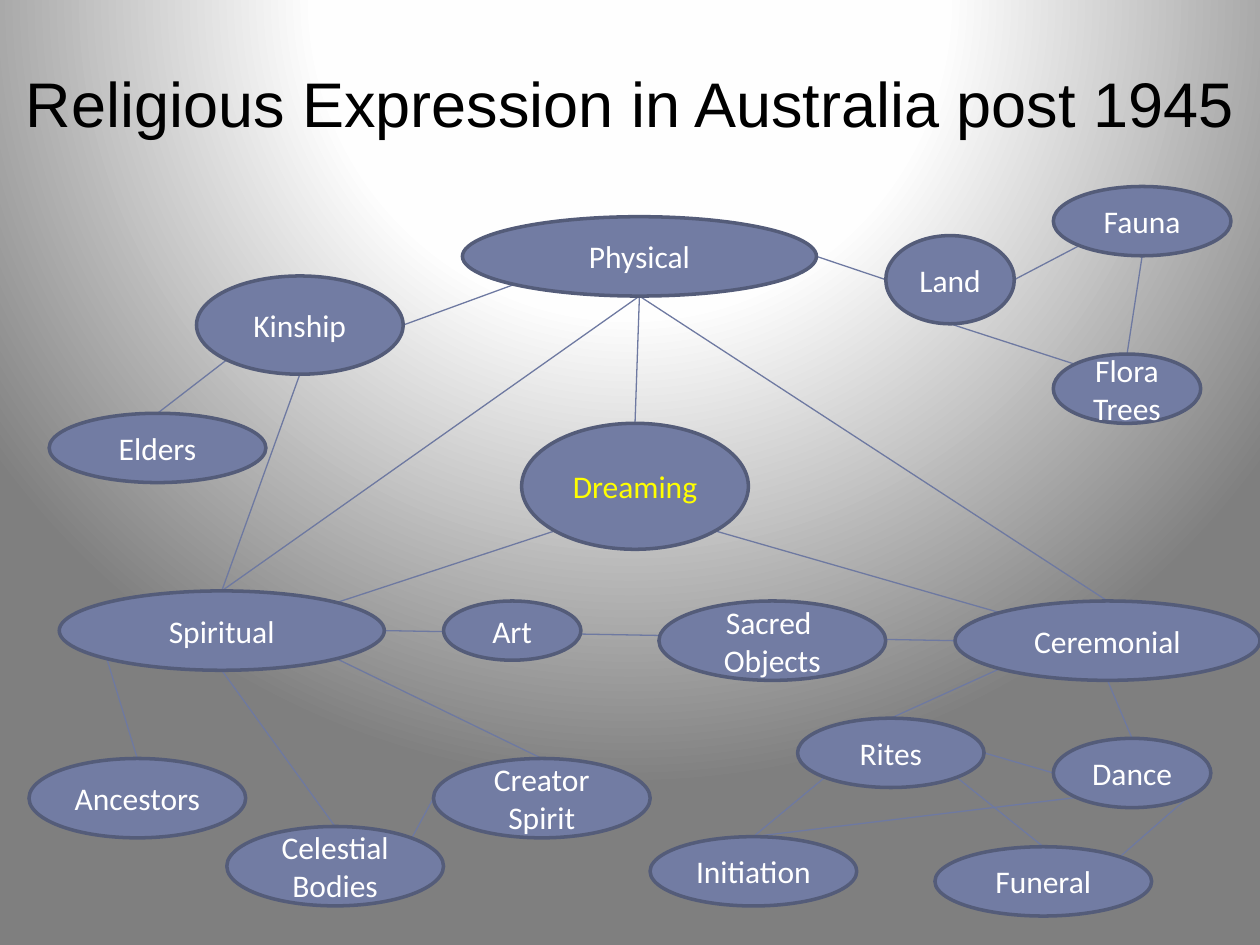
from pptx import Presentation
from pptx.dml.color import RGBColor
from pptx.enum.shapes import MSO_CONNECTOR, MSO_SHAPE
from pptx.enum.text import MSO_ANCHOR, PP_ALIGN
from pptx.oxml import parse_xml
from pptx.oxml.ns import nsdecls
from pptx.util import Inches, Pt

OVAL = MSO_SHAPE.OVAL
LINE = MSO_CONNECTOR.STRAIGHT
MIDDLE = MSO_ANCHOR.MIDDLE
CENTER = PP_ALIGN.CENTER

COLORS = {
    "fill": "727CA3", "edge": "545C79", "link": "6E79A1",
    "text": "FFFFFF", "focus": "FFFF00", "title": "000000",
}
GLOW = [(0, "FFFFFF"), (40, "FEFEFE"), (100, "7F7F7F")]

# Unit offsets from an oval's centre to its rim
DIAG = 0.707
RIM = {
    "n": (0, -1), "s": (0, 1), "w": (-1, 0), "e": (1, 0),
    "nw": (-DIAG, -DIAG), "ne": (DIAG, -DIAG),
    "sw": (-DIAG, DIAG), "se": (DIAG, DIAG),
}

# Label: left, top, width, height
NODES = {
    "Physical": (3.67, 1.72, 2.81, 0.63),
    "Spiritual": (0.47, 4.69, 2.58, 0.63),
    "Ceremonial": (7.58, 4.77, 2.42, 0.63),
    "Land": (7.03, 1.87, 1.02, 0.7),
    "Flora\nTrees": (8.36, 2.81, 1.17, 0.55),
    "Dance": (8.36, 5.86, 1.25, 0.55),
    "Ancestors": (0.23, 6.02, 1.72, 0.63),
    "Creator\nSpirit": (3.44, 6.02, 1.72, 0.63),
    "Kinship": (1.56, 2.19, 1.64, 0.78),
    "Rites": (6.33, 5.7, 1.48, 0.55),
    "Fauna": (8.36, 1.48, 1.41, 0.55),
    "Initiation": (5.16, 6.64, 1.64, 0.55),
    "Funeral": (7.42, 6.72, 1.72, 0.55),
    "Dreaming": (4.14, 3.36, 1.8, 1),
    "Elders": (0.39, 3.28, 1.72, 0.55),
    "Art": (3.52, 4.77, 1.09, 0.47),
    "Celestial\nBodies": (1.8, 6.56, 1.72, 0.63),
    "Sacred \nObjects": (5.23, 4.77, 1.8, 0.63),
}

LINKS = [
    ("Spiritual", "n", "Physical", "s"),
    ("Spiritual", "e", "Ceremonial", "w"),
    ("Ceremonial", "n", "Physical", "s"),
    ("Physical", "e", "Land", "w"),
    ("Land", "s", "Flora\nTrees", "nw"),
    ("Ceremonial", "s", "Dance", "n"),
    ("Ancestors", "n", "Spiritual", "sw"),
    ("Creator\nSpirit", "n", "Spiritual", "se"),
    ("Kinship", "e", "Physical", "sw"),
    ("Kinship", "s", "Spiritual", "n"),
    ("Rites", "n", "Ceremonial", "sw"),
    ("Rites", "e", "Dance", "w"),
    ("Land", "e", "Fauna", "sw"),
    ("Fauna", "s", "Flora\nTrees", "n"),
    ("Initiation", "n", "Rites", "sw"),
    ("Initiation", "n", "Dance", "sw"),
    ("Funeral", "ne", "Dance", "se"),
    ("Funeral", "n", "Rites", "se"),
    ("Dreaming", "n", "Physical", "s"),
    ("Dreaming", "sw", "Spiritual", "ne"),
    ("Ceremonial", "nw", "Dreaming", "se"),
    ("Elders", "n", "Kinship", "sw"),
    ("Celestial\nBodies", "ne", "Creator\nSpirit", "w"),
    ("Celestial\nBodies", "n", "Spiritual", "s"),
]


def write(shape, text, size=18, font="Calibri", color="text"):
    frame = shape.text_frame
    frame.word_wrap = True
    frame.vertical_anchor = MIDDLE
    frame.text = text
    for para in frame.paragraphs:
        para.alignment = CENTER
        for run in para.runs:
            run.font.size = Pt(size)
            run.font.name = font
            run.font.color.rgb = RGBColor.from_string(COLORS[color])


def rim(name, side):
    """Return the point on a node's rim in a compass direction."""
    left, top, width, height = NODES[name]
    dx, dy = RIM[side]
    return (Inches(left + width / 2 * (1 + dx)),
            Inches(top + height / 2 * (1 + dy)))


prs = Presentation()
prs.slide_width, prs.slide_height = Inches(10), Inches(7.5)
slide = prs.slides.add_slide(prs.slide_layouts[6])
shapes = slide.shapes

# Round glow centred above the slide
stops = "".join(
    f'<a:gs pos="{pos * 1000}"><a:srgbClr val="{tone}"/></a:gs>'
    for pos, tone in GLOW)
slide.element.cSld.insert(0, parse_xml(
    f'<p:bg {nsdecls("p", "a")}><p:bgPr><a:gradFill rotWithShape="1">'
    f'<a:gsLst>{stops}</a:gsLst><a:path path="circle">'
    '<a:fillToRect l="50000" t="-80000" r="50000" b="180000"/></a:path>'
    '</a:gradFill><a:effectLst/></p:bgPr></p:bg>'))

title = shapes.add_textbox(Inches(0), Inches(0.3), Inches(10), Inches(1.03))
write(title, "Religious Expression in Australia post 1945",
      size=36, font="Arial", color="title")

# Links lie behind the ovals
for start, out, end, into in LINKS:
    link = shapes.add_connector(LINE, *rim(start, out), *rim(end, into))
    link.line.color.rgb = RGBColor.from_string(COLORS["link"])
    link.line.width = Pt(0.75)
    link.element.spPr.append(parse_xml(f'<a:effectLst {nsdecls("a")}/>'))

for name, box in NODES.items():
    oval = shapes.add_shape(OVAL, *map(Inches, box))
    oval.shadow.inherit = False
    oval.fill.solid()
    oval.fill.fore_color.rgb = RGBColor.from_string(COLORS["fill"])
    oval.line.color.rgb = RGBColor.from_string(COLORS["edge"])
    oval.line.width = Pt(2)
    write(oval, name, color="focus" if name == "Dreaming" else "text")

prs.save("out.pptx")
